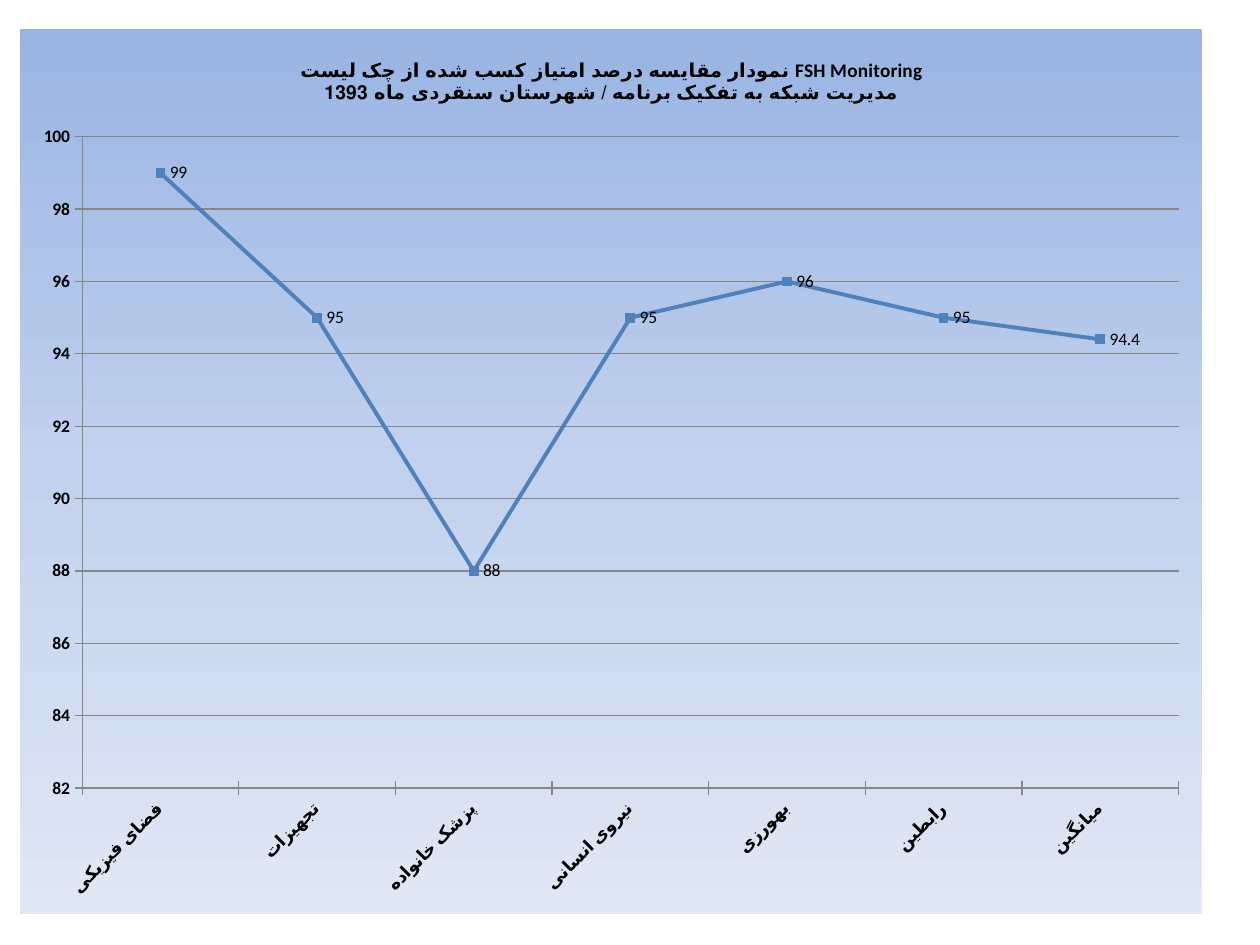
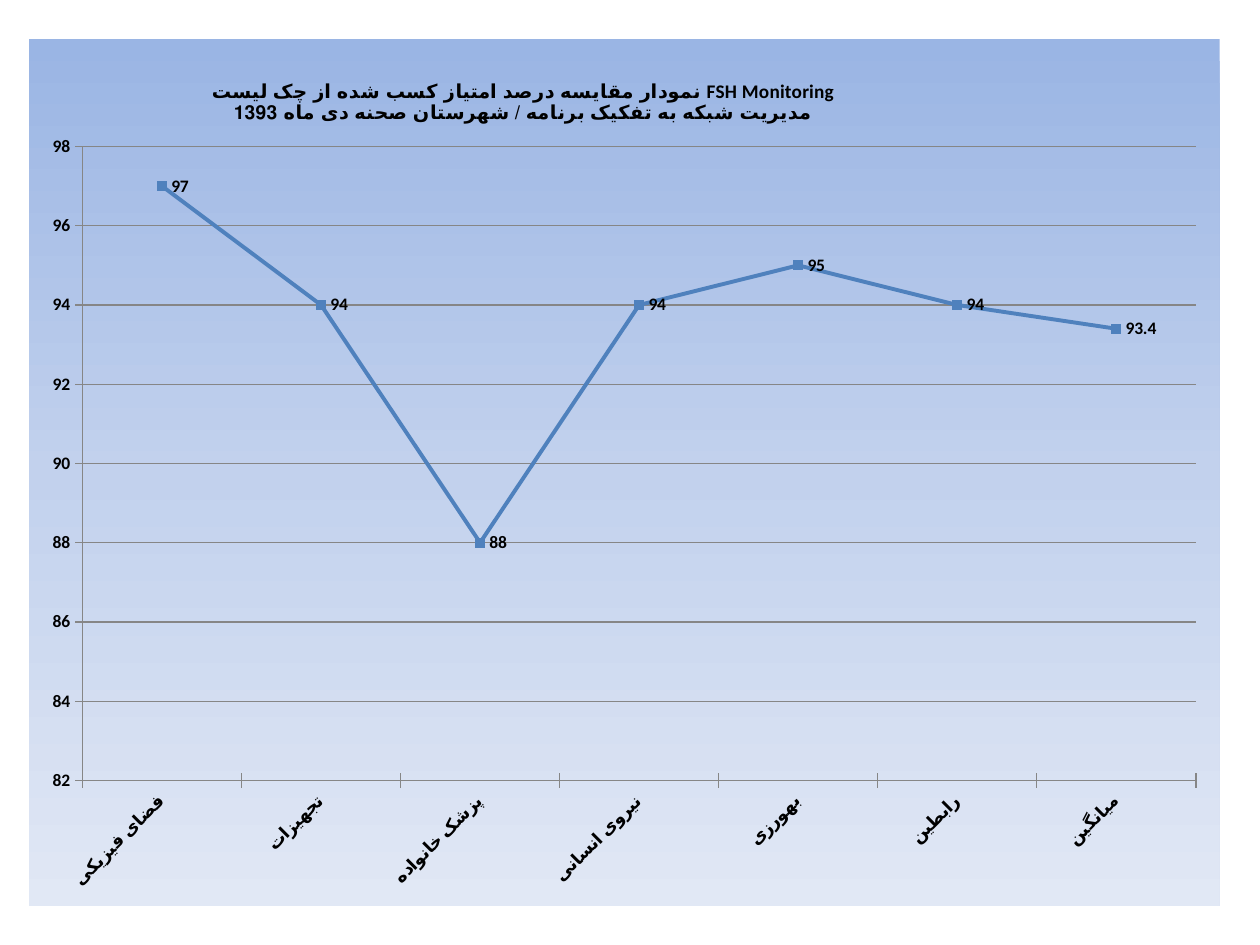
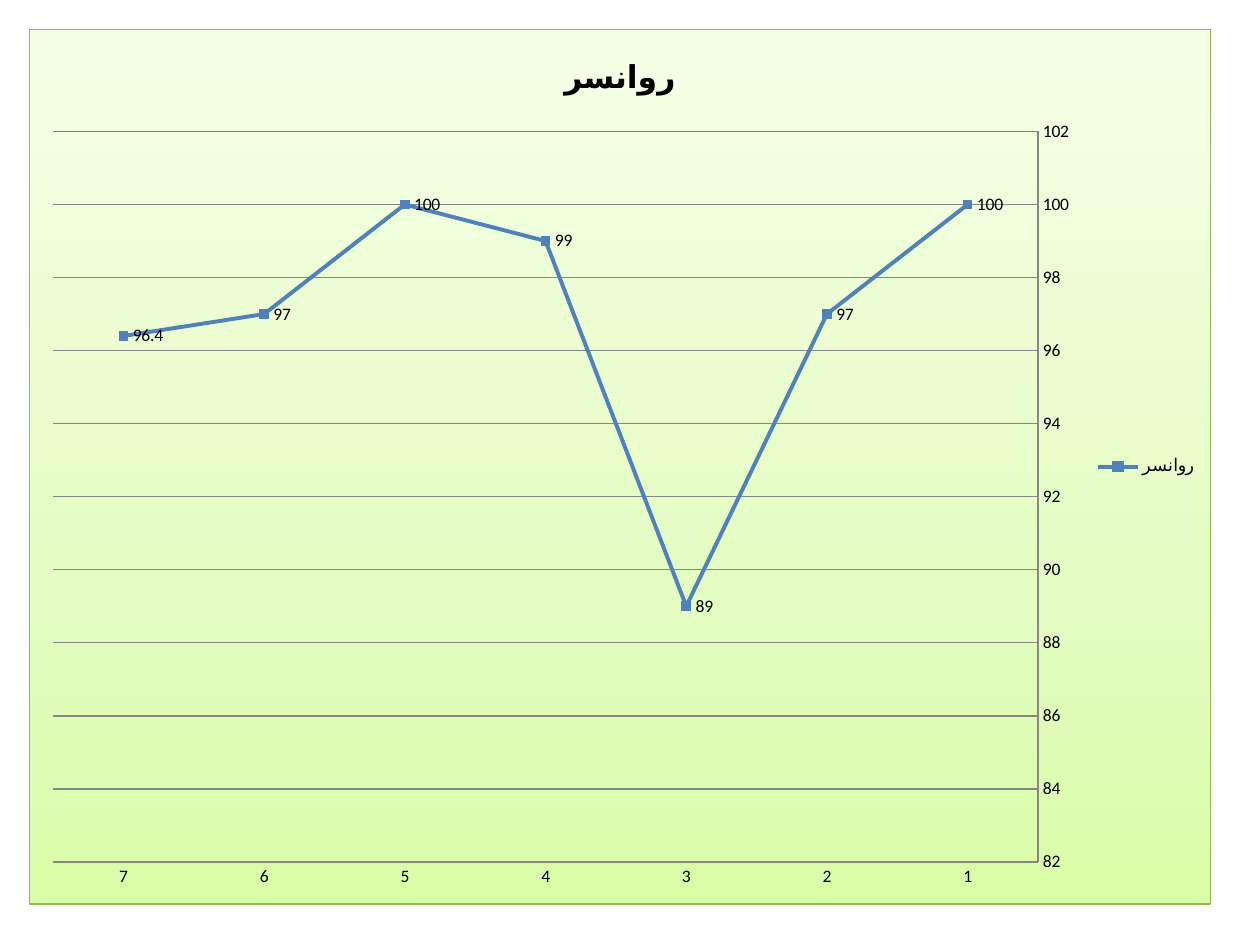
from pptx import Presentation
from pptx.chart.data import CategoryChartData
from pptx.dml.color import RGBColor
from pptx.enum.chart import (
    XL_CHART_TYPE as ChartType,
    XL_LABEL_POSITION as LabelPos,
    XL_LEGEND_POSITION as LegendPos,
    XL_MARKER_STYLE as Marker,
    XL_TICK_MARK as Tick,
)
from pptx.oxml import parse_xml
from pptx.oxml.ns import nsdecls, qn
from pptx.util import Pt

COLORS = {
    "text": "000000",
    "line": "4F81BD",
    "grid": "868686",
    "border": "98B955",
    "blue_dark": "9AB5E4",
    "blue_mid": "C2D1ED",
    "blue_light": "E1E8F5",
    "green_dark": "DAFDA7",
    "green_mid": "E4FCC2",
    "green_light": "F5FFE7",
}
BLUE = ([(0, "blue_dark"), (50, "blue_mid"), (100, "blue_light")], 90)
GREEN = ([(0, "green_dark"), (35, "green_mid"), (100, "green_light")], 270)
PROGRAMS = ["فضای فیزیکی", "تجهیزات", "پزشک خانواده", "نیروی انسانی",
            "بهورزی", "رابطین", "میانگین"]
TITLE_START = "نمودار مقایسه درصد امتیاز کسب شده از چک لیست FSH Monitoring"
TITLE_END = "مدیریت شبکه به تفکیک برنامه / شهرستان {}"


def rgb(name):
    return RGBColor.from_string(COLORS[name])


class Deck:
    font_name = "Calibri"
    font_size = 10

    def __init__(self):
        self.prs = Presentation()
        self.prs.slide_width, self.prs.slide_height = Pt(720), Pt(540)
        self.s = None

    def slide(self):
        self.s = self.prs.slides.add_slide(self.prs.slide_layouts[6])

    def style_font(self, font, size, bold):
        font.name, font.size, font.bold = self.font_name, Pt(size), bold
        font.color.rgb = rgb("text")

    def line_chart(self, box, categories, name, values, top, bold_labels=False):
        data = CategoryChartData()
        data.categories = categories
        data.add_series(name, values)
        frame = self.s.shapes.add_chart(
            ChartType.LINE_MARKERS, *[Pt(n) for n in box], data)
        chart = frame.chart
        self.style_font(chart.font, self.font_size, bold_labels)
        chart.has_legend = False
        self.series(chart.plots[0], bold_labels)
        axis = chart.value_axis
        axis.minimum_scale, axis.maximum_scale, axis.major_unit = 82, top, 2
        axis.has_major_gridlines = True
        self.line(axis.major_gridlines.format.line, "grid")
        return chart

    def line(self, line, color, width=0.75):
        line.color.rgb = rgb(color)
        line.width = Pt(width)

    def series(self, plot, bold):
        plot.vary_by_categories = False
        ser = plot.series[0]
        ser.smooth = False
        self.line(ser.format.line, "line", 2.25)
        ser.marker.style, ser.marker.size = Marker.SQUARE, 5
        ser.marker.format.fill.solid()
        ser.marker.format.fill.fore_color.rgb = rgb("line")
        self.line(ser.marker.format.line, "line")
        labels = ser.data_labels
        labels.show_value = True
        labels.position = LabelPos.RIGHT
        self.style_font(labels.font, self.font_size, bold)

    def axes(self, chart, tick, bold=False, angle=0):
        for axis in (chart.category_axis, chart.value_axis):
            axis.major_tick_mark, axis.minor_tick_mark = tick, Tick.NONE
            self.line(axis.format.line, "grid")
            self.style_font(axis.tick_labels.font, self.font_size, bold)
        if angle:
            body = chart.category_axis._element.find(
                qn("c:txPr")).find(qn("a:bodyPr"))
            body.set("rot", str(angle * 60000))
            body.set("vert", "horz")

    def title(self, chart, lines, size, corner=None):
        chart.has_title = True
        tf = chart.chart_title.text_frame
        tf.text = "\n".join(lines)
        for p in tf.paragraphs:
            self.style_font(p.font, size, True)
        if corner:
            x, y = corner
            layout = chart.chart_title._element.find(qn("c:layout"))
            layout.append(parse_xml(
                f'<c:manualLayout {nsdecls("c")}>'
                '<c:xMode val="edge"/><c:yMode val="edge"/>'
                f'<c:x val="{x}"/><c:y val="{y}"/></c:manualLayout>'))

    def background(self, chart, gradient, border=None):
        stops, angle = gradient
        stop_xml = "".join(
            f'<a:gs pos="{pos * 1000}"><a:srgbClr val="{COLORS[c]}"/></a:gs>'
            for pos, c in stops)
        line_xml = "<a:noFill/>"
        if border:
            line_xml = (f'<a:solidFill><a:srgbClr val="{COLORS[border]}"/>'
                        '</a:solidFill>')
        chart._chartSpace.find(qn("c:chart")).addnext(parse_xml(
            f'<c:spPr {nsdecls("c", "a")}><a:gradFill><a:gsLst>{stop_xml}'
            f'</a:gsLst><a:lin ang="{angle * 60000}" scaled="1"/></a:gradFill>'
            f'<a:ln w="{Pt(0.75)}">{line_xml}</a:ln></c:spPr>'))

    def legend(self, chart):
        chart.has_legend = True
        chart.legend.position = LegendPos.RIGHT
        chart.legend.include_in_layout = False
        self.style_font(chart.legend.font, self.font_size, False)

    def program_chart(self, box, place, values, top, bold_labels, corner=None):
        self.slide()
        chart = self.line_chart(
            box, PROGRAMS, "Series 1", values, top, bold_labels)
        self.axes(chart, Tick.CROSS, bold=True, angle=-45)
        self.title(chart, [TITLE_START, TITLE_END.format(place)], 11, corner)
        self.background(chart, BLUE)

    def city_chart(self, box, city, values, top):
        self.slide()
        numbers = [str(n) for n in range(1, len(values) + 1)]
        chart = self.line_chart(box, numbers, city, values, top)
        self.axes(chart, Tick.NONE)
        chart.category_axis.reverse_order = True
        self.title(chart, [city], 18)
        self.legend(chart)
        self.background(chart, GREEN, "border")


def main():
    deck = Deck()
    deck.program_chart((11.5, 16.5, 675.5, 506), "سنقردی ماه 1393",
                       [99, 95, 88, 95, 96, 95, 94.4], 100, False)
    deck.program_chart((16.5, 22.5, 680.5, 495.5), "صحنه دی ماه 1393",
                       [97, 94, 88, 94, 95, 94, 93.4], 98, True, (0.15, 0.04))
    deck.city_chart((16.5, 16.5, 675.5, 500.5), "روانسر",
                    [100, 97, 89, 99, 100, 97, 96.4], 102)
    deck.prs.save("out.pptx")


if __name__ == "__main__":
    main()
